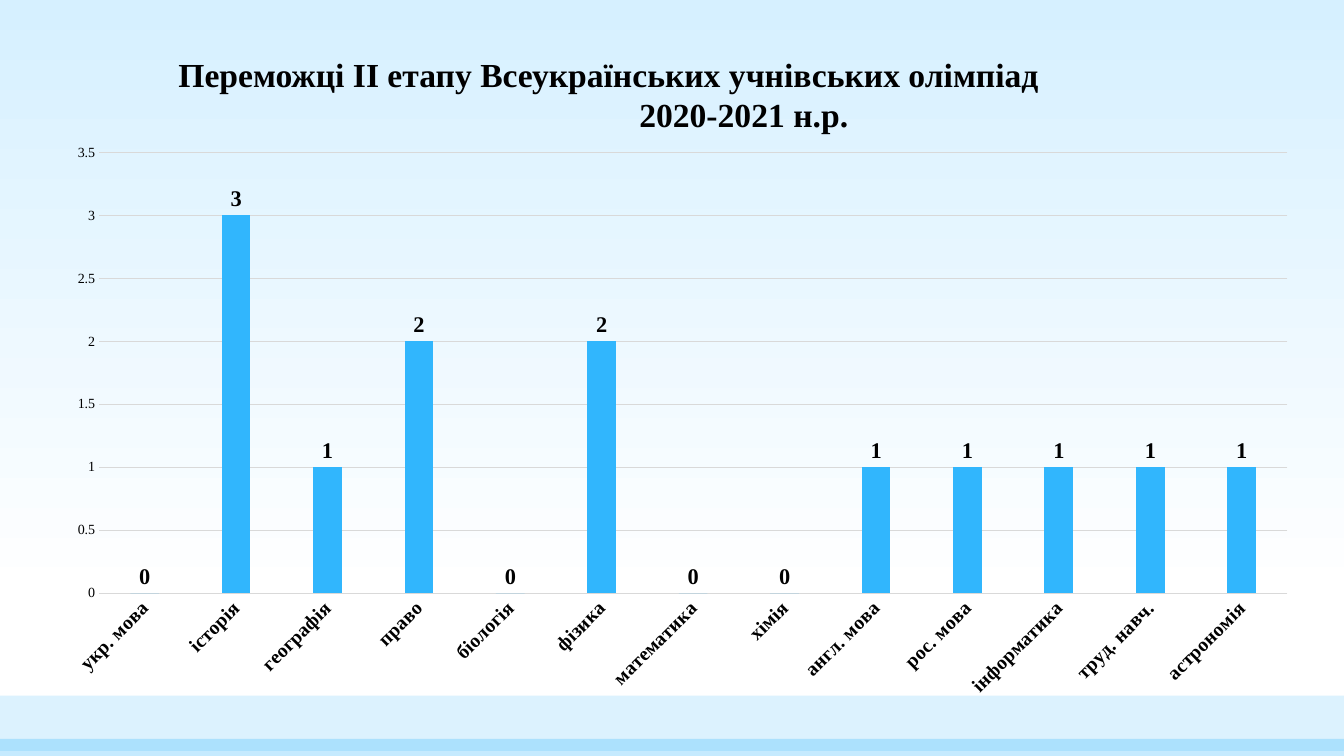
from lxml.etree import SubElement
from pptx import Presentation
from pptx.chart.data import CategoryChartData
from pptx.dml.color import RGBColor
from pptx.enum.chart import XL_CHART_TYPE, XL_LABEL_POSITION, XL_TICK_MARK
from pptx.enum.shapes import MSO_SHAPE
from pptx.enum.text import MSO_ANCHOR, MSO_AUTO_SIZE, PP_ALIGN
from pptx.oxml import parse_xml
from pptx.oxml.ns import nsdecls, qn
from pptx.util import Inches, Pt

COLORS = {"sky": "D6F0FF", "white": "FFFFFF", "blue": "31B6FD",
          "text": "000000", "grid": "D9D9D9"}
FONT = "Times New Roman"
TITLE_LINES = ["Переможці ІІ етапу Всеукраїнських учнівських олімпіад",
               "2020-2021 н.р."]
WINNERS = {
    "укр. мова": 0, "історія": 3, "географія": 1, "право": 2, "біологія": 0,
    "фізика": 2, "математика": 0, "хімія": 0, "англ. мова": 1, "рос. мова": 1,
    "інформатика": 1, "труд. навч.": 1, "астрономія": 1,
}


def color(name):
    return RGBColor.from_string(COLORS[name])


def style_font(font, size, bold=False):
    font.name = FONT
    font.size = Pt(size)
    font.bold = bold
    font.color.rgb = color("text")


def style_line(line):
    line.color.rgb = color("grid")
    line.width = Pt(0.75)


def paint_background(slide):
    fill = slide.background.fill
    fill.gradient()
    fill.gradient_angle = 270
    for stop, (name, position) in zip(fill.gradient_stops,
                                      [("sky", 0), ("white", 0.79)]):
        stop.color.rgb = color(name)
        stop.position = position


def add_band(slide, top, height, opacity):
    band = slide.shapes.add_shape(MSO_SHAPE.RECTANGLE, 0, Inches(top),
                                  Inches(13.33), Inches(height))
    band.shadow.inherit = False
    band.line.fill.background()
    band.fill.solid()
    band.fill.fore_color.rgb = color("blue")
    tint = band.fill._xPr.find(qn("a:solidFill"))[0]
    SubElement(tint, qn("a:alpha")).set("val", str(opacity * 1000))


def fill_title(title):
    title.left, title.top = Inches(1.77), Inches(0.53)
    title.width, title.height = Inches(9.8), Inches(0.78)
    frame = title.text_frame
    frame.text = "\n".join(TITLE_LINES)
    frame.auto_size = MSO_AUTO_SIZE.NONE
    frame.word_wrap = True
    frame.vertical_anchor = MSO_ANCHOR.TOP
    frame.margin_left = frame.margin_right = 0
    frame.margin_top = frame.margin_bottom = 0
    for line, indent in zip(frame.paragraphs, [0, 4.57]):
        line.alignment = PP_ALIGN.LEFT
        line.space_before = Pt(0)
        line._p.get_or_add_pPr().set("marL", str(Inches(indent)))
        style_font(line.runs[0].font, 24, bold=True)


def style_axes(chart):
    subjects, counts = chart.category_axis, chart.value_axis
    for axis in (subjects, counts):
        axis.major_tick_mark = axis.minor_tick_mark = XL_TICK_MARK.NONE
    style_font(subjects.tick_labels.font, 14, bold=True)
    style_line(subjects.format.line)
    label_body = subjects._element.find(qn("c:txPr")).find(qn("a:bodyPr"))
    label_body.set("rot", "-2700000")
    label_body.set("vert", "horz")

    style_font(counts.tick_labels.font, 10)
    counts.minimum_scale, counts.maximum_scale = 0, 3.5
    counts.major_unit = 0.5
    counts.format.line.fill.background()
    style_line(counts.major_gridlines.format.line)


def place_plot(chart, x, y, width, height):
    values = {"x": x, "y": y, "w": width, "h": height}
    sizes = "".join(f'<c:{key} val="{val}"/>' for key, val in values.items())
    layout = parse_xml(
        f'<c:layout {nsdecls("c")}><c:manualLayout>'
        '<c:layoutTarget val="inner"/><c:xMode val="edge"/>'
        f'<c:yMode val="edge"/>{sizes}</c:manualLayout></c:layout>')
    plot_area = chart._chartSpace.chart.plotArea
    for old in plot_area.findall(qn("c:layout")):
        plot_area.remove(old)
    plot_area.insert(0, layout)


def add_winners_chart(slide):
    data = CategoryChartData()
    data.categories = list(WINNERS)
    data.add_series("Series 1", list(WINNERS.values()))
    chart = slide.shapes.add_chart(
        XL_CHART_TYPE.COLUMN_CLUSTERED, Inches(0.48), Inches(0.3),
        Inches(12.54), Inches(6.73), data).chart
    chart.has_title = chart.has_legend = False
    style_font(chart.font, 10)
    chart._chartSpace.chart.addnext(parse_xml(
        f'<c:spPr {nsdecls("c", "a")}><a:noFill/>'
        '<a:ln><a:noFill/></a:ln></c:spPr>'))

    # Columns and their values
    plot = chart.plots[0]
    plot.gap_width, plot.overlap = 219, -27
    plot.vary_by_categories = False
    winners = plot.series[0]
    winners.format.fill.solid()
    winners.format.fill.fore_color.rgb = color("blue")
    labels = winners.data_labels
    labels.show_value = True
    labels.position = XL_LABEL_POSITION.OUTSIDE_END
    style_font(labels.font, 16, bold=True)

    style_axes(chart)
    place_plot(chart, 0.04, 0.18, 0.94, 0.65)


def main():
    deck = Presentation()
    deck.slide_width, deck.slide_height = Inches(13.33), Inches(7.5)
    slide = deck.slides.add_slide(deck.slide_layouts[5])

    # Backdrop
    paint_background(slide)
    add_band(slide, 6.9, 0.55, 17)
    add_band(slide, 7.33, 0.17, 28)

    # Title and chart
    fill_title(slide.shapes.title)
    add_winners_chart(slide)
    deck.save("out.pptx")


if __name__ == "__main__":
    main()
